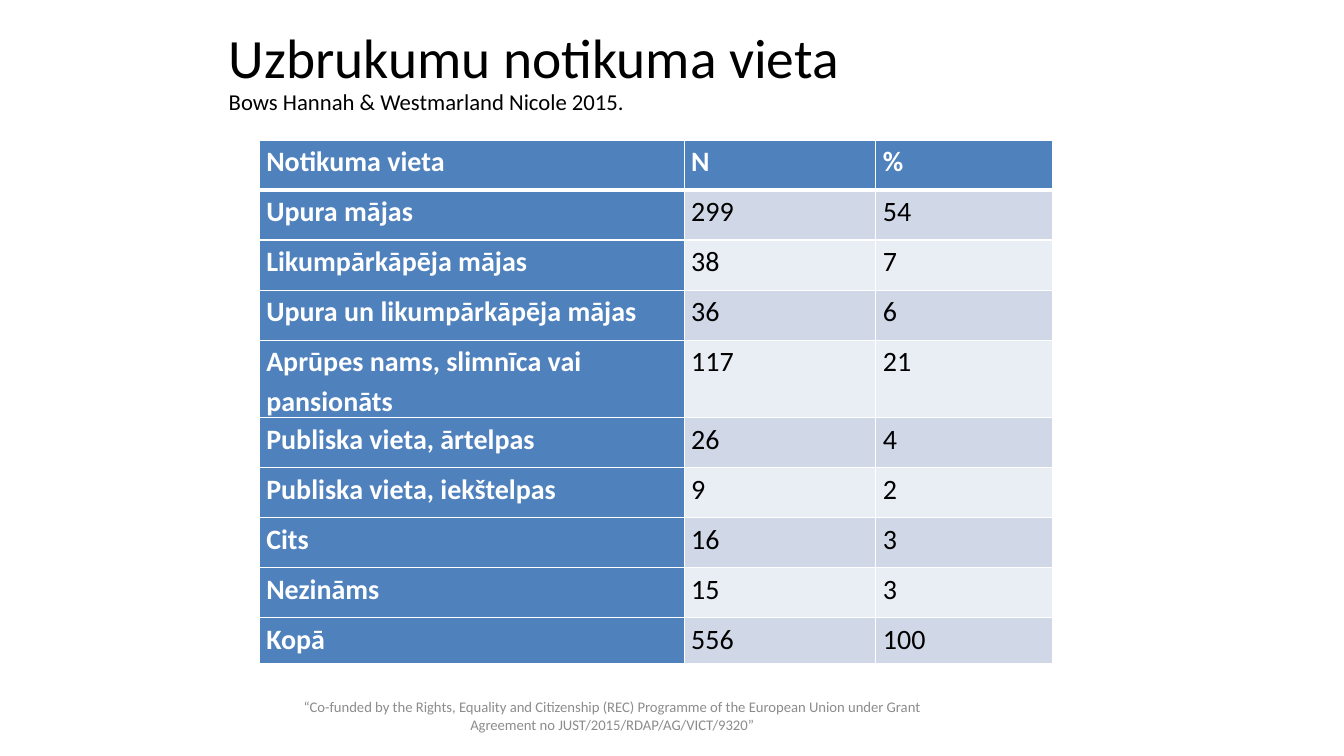
from dataclasses import dataclass

from lxml import etree
from pptx import Presentation
from pptx import util as u
from pptx.dml.color import RGBColor
from pptx.enum import text
from pptx.oxml.ns import qn


@dataclass(frozen=True)
class Theme:
    font: str = "Calibri"
    ink: str = "000000"
    white: str = "FFFFFF"
    muted: str = "8C8C8C"
    accent: str = "4F81BD"
    bands: tuple = ("D0D8E8", "E9EDF4")
    title: float = 39.6
    subtitle: float = 16.2
    body: float = 20
    footer: float = 10.5


THEME = Theme()
COLUMN_WIDTHS = (10.71, 4.83, 4.45)
ROW_HEIGHT, TALL_ROW, LAST_ROW = 1.26, 1.55, 1.16
ROWS = [
    ("Notikuma vieta", "N", "%"),
    ("Upura mājas", "299", "54"),
    ("Likumpārkāpēja mājas", "38", "7"),
    ("Upura un likumpārkāpēja mājas", "36", "6"),
    ("Aprūpes nams, slimnīca vai pansionāts", "117", "21"),
    ("Publiska vieta, ārtelpas", "26", "4"),
    ("Publiska vieta, iekštelpas", "9", "2"),
    ("Cits", "16", "3"),
    ("Nezināms", "15", "3"),
    ("Kopā", "556", "100"),
]


def write(p, content, size, color=THEME.ink, bold=False,
          align=text.PP_ALIGN.LEFT, line=None, after=None):
    p.alignment = align
    if line is not None:
        p.line_spacing = line
    if after is not None:
        p.space_after = u.Pt(after)
    r = p.add_run()
    r.text = content
    r.font.name = THEME.font
    r.font.size = u.Pt(size)
    r.font.bold = bold
    r.font.color.rgb = RGBColor.from_string(color)


def set_border(cell, side, width):
    ln = etree.SubElement(cell._tc.get_or_add_tcPr(), qn(f"a:ln{side}"),
                          w=str(u.Pt(width)))
    fill = etree.SubElement(ln, qn("a:solidFill"))
    etree.SubElement(fill, qn("a:srgbClr"), val=THEME.white)


def place(sp, box):
    sp.left, sp.top, sp.width, sp.height = (u.Cm(v) for v in box)


def add_heading(s, box):
    sp = s.shapes.title
    place(sp, box)
    tf = sp.text_frame
    tf.word_wrap = True
    tf.auto_size = text.MSO_AUTO_SIZE.NONE
    tf.vertical_anchor = text.MSO_ANCHOR.MIDDLE
    p = tf.paragraphs[0]
    write(p, "Uzbrukumu notikuma vieta", THEME.title, line=0.9)
    p.add_line_break()
    write(p, "Bows Hannah & Westmarland Nicole 2015.", THEME.subtitle, line=0.9)


def fill_cell(cell, content, row, col):
    header = row == 0
    label = header or col == 0
    cell.margin_left = cell.margin_right = u.Cm(0.18)
    cell.margin_top = cell.margin_bottom = 0
    cell.vertical_anchor = text.MSO_ANCHOR.TOP
    widths = {"L": 1, "R": 1, "T": 3 if row == 1 else 1, "B": 3 if header else 1}
    for side, width in widths.items():
        set_border(cell, side, width)
    color = THEME.accent if label else THEME.bands[(row - 1) % 2]
    cell.fill.solid()
    cell.fill.fore_color.rgb = RGBColor.from_string(color)
    write(cell.text_frame.paragraphs[0], content, THEME.body,
          color=THEME.white if label else THEME.ink, bold=label,
          line=1.15, after=8.3)


def add_places_table(s, box):
    frame = s.shapes.add_table(len(ROWS), len(COLUMN_WIDTHS),
                               *(u.Cm(v) for v in box))
    table = frame.table
    table.first_col = True
    for column, width in zip(table.columns, COLUMN_WIDTHS):
        column.width = u.Cm(width)
    for row in table.rows:
        row.height = u.Cm(ROW_HEIGHT)
    table.rows[4].height = u.Cm(TALL_ROW)
    table.rows[len(ROWS) - 1].height = u.Cm(LAST_ROW)
    for i, values in enumerate(ROWS):
        for j, value in enumerate(values):
            fill_cell(table.cell(i, j), value, i, j)


def add_funding_note(s, box):
    sp = s.shapes.add_textbox(*(u.Cm(v) for v in box))
    tf = sp.text_frame
    tf.word_wrap = True
    tf.vertical_anchor = text.MSO_ANCHOR.MIDDLE
    write(tf.paragraphs[0],
          "“Co-funded by the Rights, Equality and Citizenship (REC) Programme "
          "of the European Union under Grant Agreement no "
          "JUST/2015/RDAP/AG/VICT/9320”",
          THEME.footer, color=THEME.muted, align=text.PP_ALIGN.CENTER)


def main():
    prs = Presentation()
    prs.slide_width, prs.slide_height = u.Cm(33.87), u.Cm(19.05)
    s = prs.slides.add_slide(prs.slide_layouts[5])
    add_funding_note(s, (6.68, 17.53, 17.5, 1.02))
    add_heading(s, (5.51, 0.76, 22.86, 2.16))
    add_places_table(s, (6.53, 3.53, 19.99, 13.13))
    prs.save("out.pptx")


if __name__ == "__main__":
    main()
